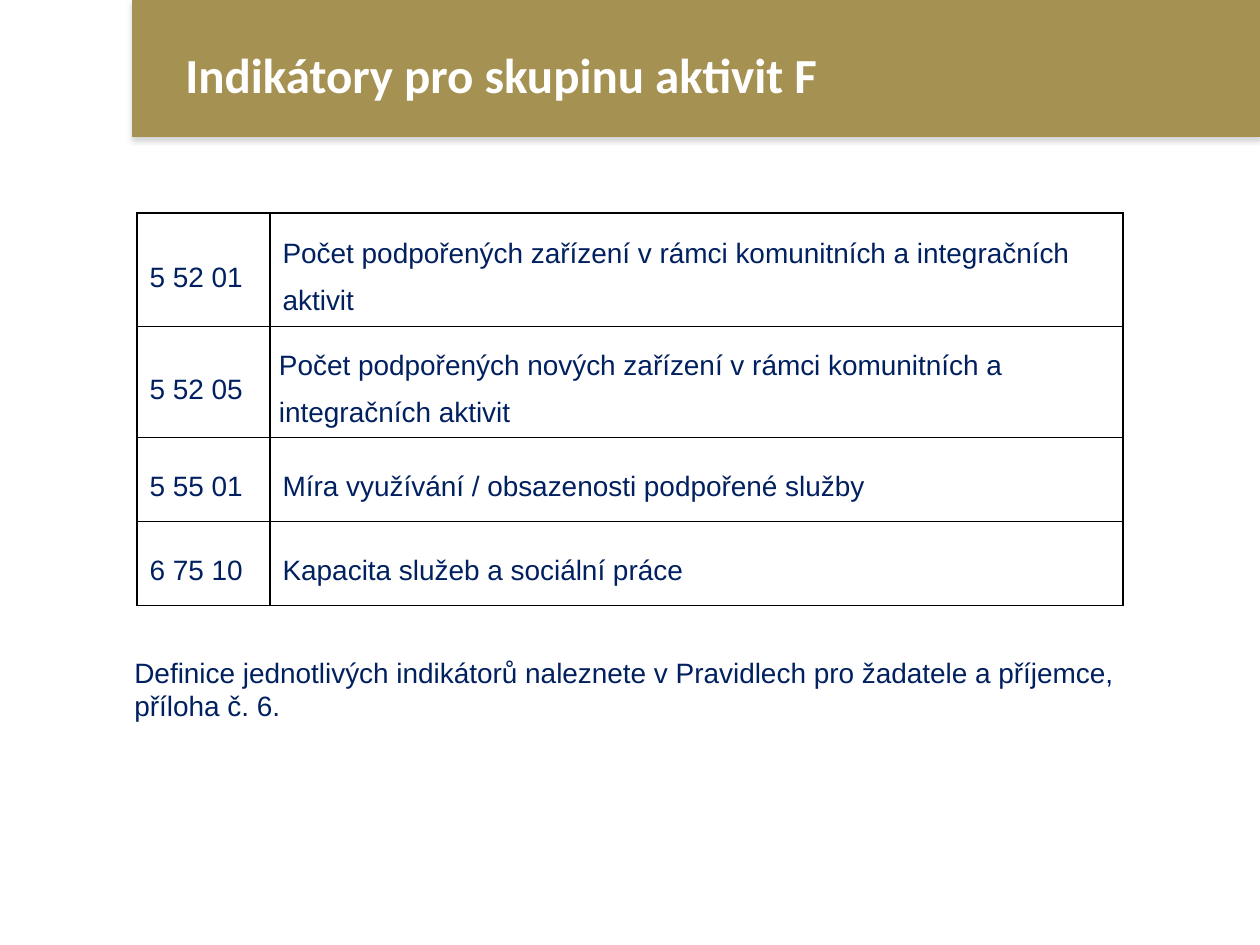
from dataclasses import dataclass

from lxml.etree import SubElement
from pptx import Presentation
from pptx.dml.color import RGBColor
from pptx.enum.shapes import MSO_SHAPE as Shape
from pptx.enum.text import MSO_ANCHOR as Anchor
from pptx.oxml.ns import qn
from pptx.slide import Slide
from pptx.table import _Cell as Cell
from pptx.text.text import _Paragraph as Paragraph
from pptx.util import Emu, Pt

PX_PER_INCH = 126


def px(length: int) -> Emu:
    return Emu(round(length * 914400 / PX_PER_INCH))


@dataclass(frozen=True)
class Theme:
    banner: str = "A59253"
    banner_shadow: str = "808080"
    title: str = "FFFFFF"
    body: str = "002060"
    border: str = "000000"
    title_font: str = "Calibri"
    body_font: str = "Arial"
    title_size: int = 28
    body_size: int = 16
    border_width: int = 1


@dataclass(frozen=True)
class Box:
    left: int
    top: int
    width: int
    height: int

    def emu(self) -> tuple[Emu, ...]:
        return px(self.left), px(self.top), px(self.width), px(self.height)


@dataclass(frozen=True)
class Indicator:
    code: str
    name: str
    height: int = 84
    code_space_after: int = 0
    tight_margins: bool = False


THEME = Theme()
INDICATORS = (
    Indicator("5 52 01", "Počet podpořených zařízení v rámci komunitních a integračních aktivit", 106),
    Indicator("5 52 05", "Počet podpořených nových zařízení v rámci komunitních a integračních aktivit",
              111, code_space_after=6, tight_margins=True),
    Indicator("5 55 01", "Míra využívání / obsazenosti podpořené služby"),
    Indicator("6 75 10", "Kapacita služeb a sociální práce"),
)
COLUMN_WIDTHS = (133, 853)


def add_run(paragraph: Paragraph, text: str, font: str, size: int, color: str, bold: bool = False) -> None:
    run = paragraph.add_run()
    run.text = text
    run.font.name = font
    run.font.size = Pt(size)
    run.font.bold = bold
    run.font.color.rgb = RGBColor.from_string(color)


def add_body_run(paragraph: Paragraph, text: str) -> None:
    add_run(paragraph, text, THEME.body_font, THEME.body_size, THEME.body)


def add_banner(slide: Slide, box: Box) -> None:
    banner = slide.shapes.add_shape(Shape.RECTANGLE, *box.emu())
    banner.fill.solid()
    banner.fill.fore_color.rgb = RGBColor.from_string(THEME.banner)
    banner.line.fill.background()
    # Soft shadow straight below the banner
    banner.shadow.inherit = False
    effects = banner._element.spPr.find(qn("a:effectLst"))
    shadow = SubElement(effects, qn("a:outerShdw"), blurRad=str(Pt(3.1)), dist=str(Pt(1.8)),
                        dir="5400000", rotWithShape="0")
    color = SubElement(shadow, qn("a:srgbClr"), val=THEME.banner_shadow)
    SubElement(color, qn("a:alpha"), val="35000")


def add_text_box(slide: Slide, box: Box, anchor: Anchor) -> Paragraph:
    frame = slide.shapes.add_textbox(*box.emu()).text_frame
    frame.word_wrap = True
    frame.vertical_anchor = anchor
    return frame.paragraphs[0]


def set_borders(cell: Cell) -> None:
    properties = cell._tc.get_or_add_tcPr()
    for position, side in enumerate(("a:lnL", "a:lnR", "a:lnT", "a:lnB")):
        line = SubElement(properties, qn(side), w=str(Pt(THEME.border_width)))
        properties.insert(position, line)
        fill = SubElement(line, qn("a:solidFill"))
        SubElement(fill, qn("a:srgbClr"), val=THEME.border)


def fill_cell(cell: Cell, text: str) -> Paragraph:
    cell.fill.background()
    cell.vertical_anchor = Anchor.MIDDLE
    set_borders(cell)
    paragraph = cell.text_frame.paragraphs[0]
    paragraph.line_spacing = 1.5
    add_body_run(paragraph, text)
    return paragraph


def add_indicator_table(slide: Slide, left: int, top: int) -> None:
    box = Box(left, top, sum(COLUMN_WIDTHS), sum(item.height for item in INDICATORS))
    table = slide.shapes.add_table(len(INDICATORS), len(COLUMN_WIDTHS), *box.emu()).table
    table.first_row = False
    table.horz_banding = False
    for column, width in zip(table.columns, COLUMN_WIDTHS):
        column.width = px(width)
    for row, item in zip(table.rows, INDICATORS):
        row.height = px(item.height)
        code_cell, name_cell = row.cells
        code = fill_cell(code_cell, item.code)
        fill_cell(name_cell, item.name)
        if item.code_space_after:
            code.space_after = Pt(item.code_space_after)
        if item.tight_margins:
            name_cell.margin_left = name_cell.margin_right = px(9)
            name_cell.margin_top = name_cell.margin_bottom = 0


def main() -> None:
    presentation = Presentation()
    presentation.slide_width = px(1260)
    presentation.slide_height = px(945)
    slide = presentation.slides.add_slide(presentation.slide_layouts[6])

    # Banner and title
    add_banner(slide, Box(132, 0, 1128, 137))
    title = add_text_box(slide, Box(173, 8, 1051, 139), Anchor.MIDDLE)
    title.line_spacing = 0.9
    add_run(title, "Indikátory pro skupinu aktivit F", THEME.title_font, THEME.title_size, THEME.title, bold=True)

    # Indicators
    add_indicator_table(slide, 137, 213)

    # Note below the table
    note = add_text_box(slide, Box(122, 649, 1016, 81), Anchor.TOP)
    add_body_run(note, "Definice jednotlivých indikátorů naleznete v Pravidlech pro žadatele a příjemce, příloha č. 6.")

    presentation.save("out.pptx")


if __name__ == "__main__":
    main()
